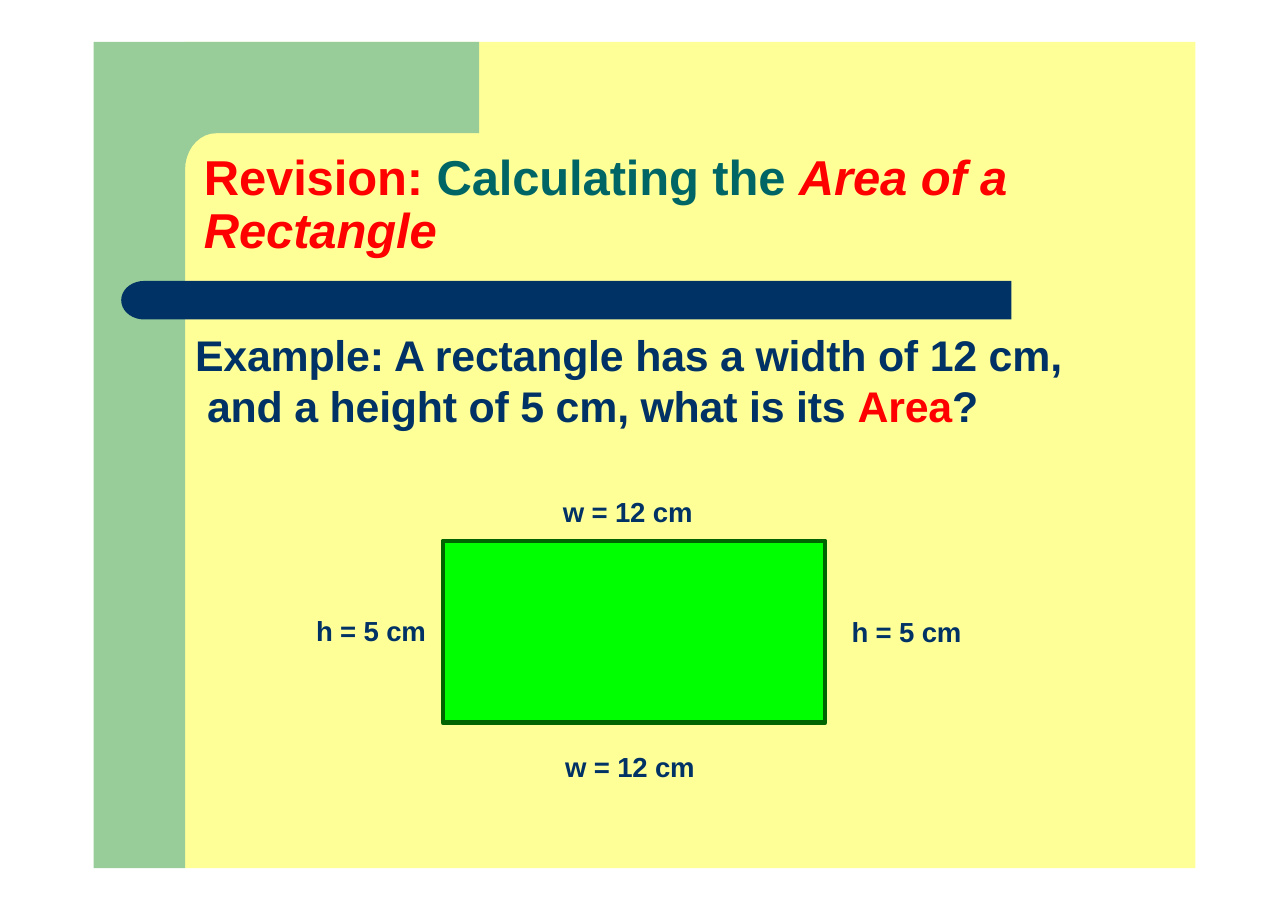
from math import cos, radians, sin

from pptx import Presentation
from pptx.dml.color import RGBColor
from pptx.enum.shapes import MSO_SHAPE
from pptx.util import Inches, Pt

RECTANGLE = MSO_SHAPE.RECTANGLE
NAVY, RED, TEAL = "003265", "FF0000", "006565"

presentation = Presentation()
presentation.slide_width = Inches(11.69)
presentation.slide_height = Inches(8.26)
slide = presentation.slides.add_slide(presentation.slide_layouts[6])

# The coloured panel is a grid of 100 columns and 75 rows
PANEL_LEFT, PANEL_TOP, CELL = Inches(0.85), Inches(0.38), Inches(0.1)


def paint(shape, fill, line=None, line_width=0):
    shape.shadow.inherit = False
    shape.fill.solid()
    shape.fill.fore_color.rgb = RGBColor.from_string(fill)
    if line:
        shape.line.color.rgb = RGBColor.from_string(line)
        shape.line.width = Pt(line_width)
    else:
        shape.line.fill.background()


def add_text(column, row, columns, rows, runs, size, top_inset=0.01,
             before=0, line_spacing=None, hanging=0):
    """Each run is (text, colour, italic)."""
    box = slide.shapes.add_textbox(
        int(PANEL_LEFT + column * CELL), int(PANEL_TOP + row * CELL),
        int(columns * CELL), int(rows * CELL))
    frame = box.text_frame
    frame.word_wrap = True
    frame.margin_left = frame.margin_right = frame.margin_bottom = 0
    frame.margin_top = Inches(top_inset)
    paragraph = frame.paragraphs[0]
    paragraph.space_before = Pt(before)
    if line_spacing:
        paragraph.line_spacing = Pt(line_spacing)
    properties = paragraph._p.get_or_add_pPr()
    properties.set("marL", str(Inches(0.01 + hanging)))
    properties.set("indent", str(-Inches(hanging)))
    for text, colour, italic in runs:
        run = paragraph.add_run()
        run.text = text
        run.font.name = "Arial"
        run.font.size = Pt(size)
        run.font.bold = True
        run.font.italic = italic
        run.font.color.rgb = RGBColor.from_string(colour)
        run._r.get_or_add_rPr().set("spc", "-10")


# Yellow background
background = slide.shapes.add_shape(
    RECTANGLE, int(PANEL_LEFT + 8.3 * CELL), PANEL_TOP,
    int(91.7 * CELL), 75 * CELL)
paint(background, "FFFF98")

# Green corner with a rounded inner edge, and navy bar with a round left end
corner_arc = [(11.1 - 2.8 * cos(radians(angle)), 11.6 - 3.3 * sin(radians(angle)))
              for angle in range(0, 91, 10)]
bar_cap = [(4.6 - 2.1 * sin(radians(angle)), 23.45 - 1.75 * cos(radians(angle)))
           for angle in range(0, 181, 10)]
outlines = [
    ("98CC98", [(35, 0), (0, 0), (0, 75), (8.3, 75), *corner_arc, (35, 8.3)]),
    (NAVY, [(83.3, 21.7), *bar_cap, (83.3, 25.2)]),
]
for colour, outline in outlines:
    points = [(int(PANEL_LEFT + column * CELL), int(PANEL_TOP + row * CELL))
              for column, row in outline]
    builder = slide.shapes.build_freeform(*points[0])
    builder.add_line_segments(points[1:], close=True)
    paint(builder.convert_to_shape(), colour)

# Title and example
add_text(9.9, 8.1, 80.2, 11.7,
         [("Revision: ", RED, False), ("Calculating the ", TEAL, False),
          ("Area of a Rectangle", RED, True)],
         size=32, top_inset=0.2, before=5.5, line_spacing=34.4)
add_text(9.1, 26, 80.1, 9.6,
         [("Example: A rectangle has a width of 12 cm, "
           "and a height of 5 cm, what is its ", NAVY, False),
          ("Area", RED, False), ("?", NAVY, False)],
         size=28, line_spacing=33.2, hanging=0.11)

# Measured rectangle with a label on each side
measured = slide.shapes.add_shape(
    RECTANGLE, int(PANEL_LEFT + 31.7 * CELL), int(PANEL_TOP + 45.3 * CELL),
    int(34.7 * CELL), int(16.5 * CELL))
paint(measured, "00FF00", line="006500", line_width=3)

labels = [
    ("h = 5 cm", 20.1, 51.8, 10.4),
    ("w = 12 cm", 42.5, 41, 12.2),
    ("h = 5 cm", 68.7, 51.9, 10.4),
    ("w = 12 cm", 42.7, 64.2, 12.2),
]
for text, column, row, columns in labels:
    add_text(column, row, columns, 3.3, [(text, NAVY, False)], size=18, before=1)

presentation.save("out.pptx")
